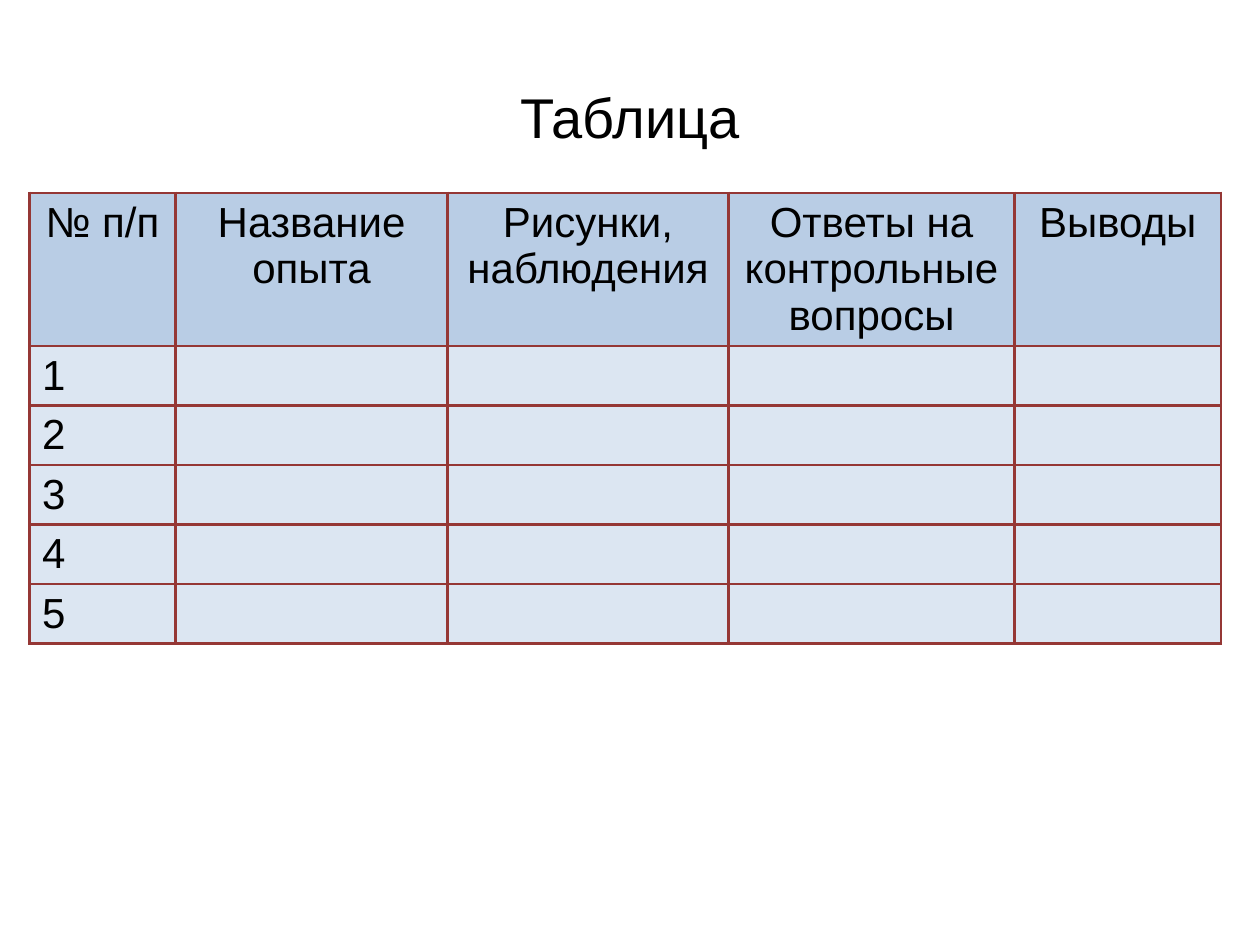
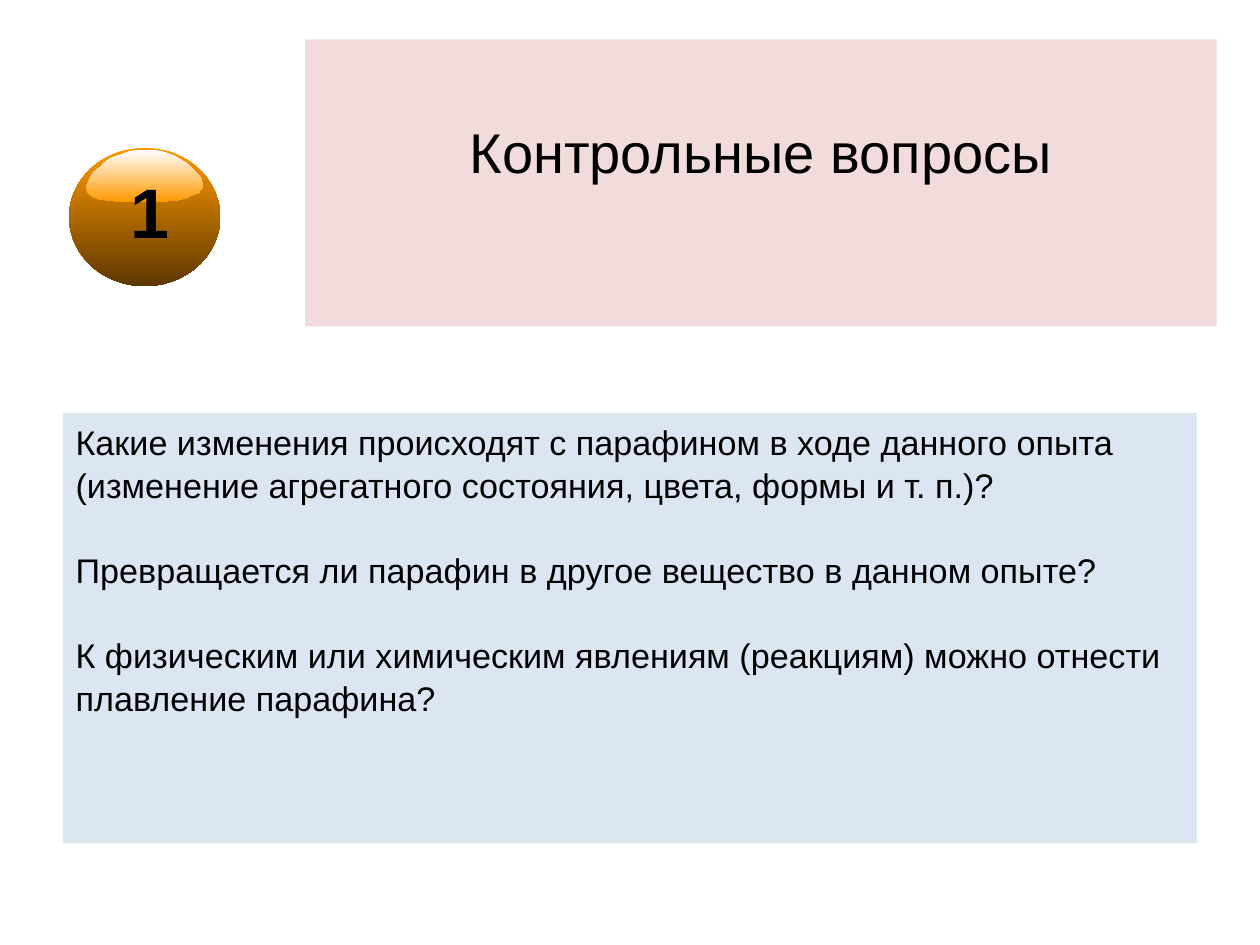
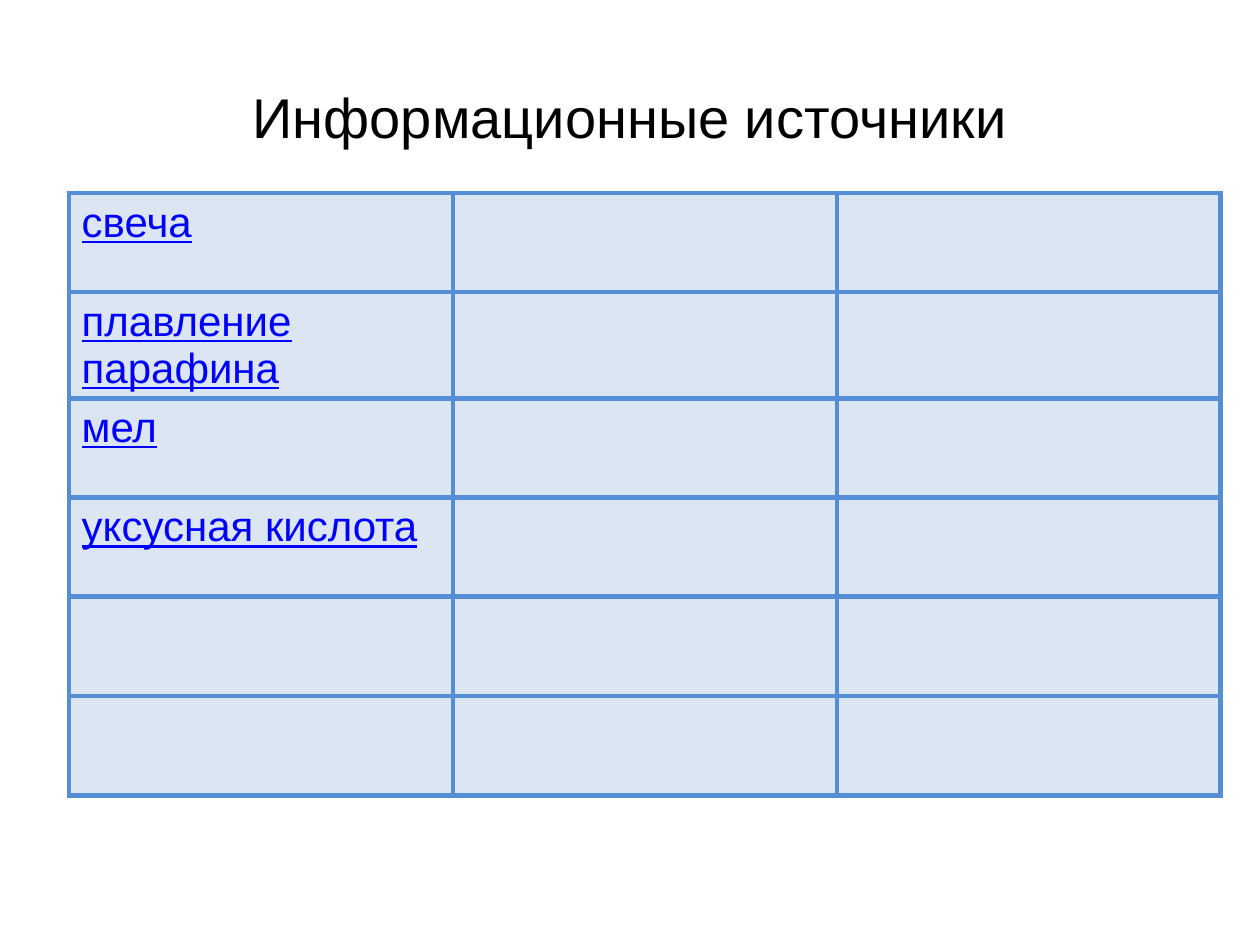
"""Builds three slides on chemistry experiments: a report table, control questions and sources."""
import pptx
import pptx.dml.color
import pptx.enum.shapes
import pptx.enum.text
import pptx.oxml
import pptx.oxml.ns
import pptx.util

Pt = pptx.util.Pt
ALIGN = pptx.enum.text.PP_ALIGN
AUTO_SIZE = pptx.enum.text.MSO_AUTO_SIZE

FONT = "Arial"
COLOURS = {
    "text": "000000",
    "link": "0000FF",
    "header": "B9CDE5",
    "panel": "DCE6F2",
    "title_panel": "F2DCDB",
    "report_border": "953735",
    "source_border": "558ED5",
    "orange": "FF9900",
    "brown": "5E3800",
    "shine": "FFFFFF",
}

REPORT_TITLE = "Таблица"
REPORT_HEADINGS = ["№ п/п", "Название опыта", "Рисунки, наблюдения",
                   "Ответы на контрольные вопросы", "Выводы"]
REPORT_WIDTHS = [83.5, 155.5, 160.5, 163.5, 118]
EXPERIMENT_COUNT = 5

QUESTIONS_TITLE = "Контрольные вопросы"
QUESTIONS = [
    "Какие изменения происходят с парафином в ходе данного опыта "
    "(изменение агрегатного состояния, цвета, формы и т. п.)?",
    "Превращается ли парафин в другое вещество в данном опыте?",
    "К физическим или химическим явлениям (реакциям) можно отнести плавление парафина?",
]
EXPERIMENT_NUMBER = "1"

SOURCES_TITLE = "Информационные источники"
SOURCES = ["свеча", "плавление парафина", "мел", "уксусная кислота", "", ""]
SOURCE_COLUMNS = 3

TITLE_BOX = (36, 21.6, 648, 90)
QUESTIONS_TITLE_BOX = (174.3, 22.5, 521, 164)
QUESTIONS_BOX = (36, 236, 648, 246)
BALL_BOX = (39.5, 84.5, 86.4, 79)
NUMBER_BOX = (67.7, 93, 36.7, 55.4)
TABLE_TOP = 110.2
TITLE_LINE = 36.8

SHINE_OUTLINE = [
    (160, 142), (161, 145), (161, 149), (159, 151), (158, 153), (155, 154), (152, 155),
    (149, 157), (145, 158), (141, 159), (136, 159), (131, 160), (97, 160), (93, 160),
    (89, 159), (85, 159), (81, 158), (78, 158), (76, 157), (73, 156), (71, 154), (70, 153),
    (69, 151), (68, 149), (69, 147), (70, 145), (72, 140), (75, 136), (79, 133), (83, 129),
    (87, 126), (92, 124), (98, 122), (103, 120), (109, 119), (115, 119), (122, 119),
    (128, 120), (134, 122), (139, 124), (144, 127), (149, 130), (153, 134), (157, 138),
]


def rgb(name):
    return pptx.dml.color.RGBColor.from_string(COLOURS[name])


def points(values):
    return [Pt(value) for value in values]


def style(paragraph, size, colour="text", bold=False, underline=False):
    font = paragraph.font
    font.name, font.size, font.bold = FONT, Pt(size), bold
    font.color.rgb = rgb(colour)
    if underline:
        font.underline = True


def paint(part, colour):
    part.fill.solid()
    part.fill.fore_color.rgb = rgb(colour)


def shade(shape, top, bottom):
    shape.shadow.inherit = False
    shape.line.fill.background()
    shape.fill.gradient()
    shape.fill.gradient_angle = 270
    for stop, colour in zip(shape.fill.gradient_stops, (top, bottom)):
        stop.color.rgb = rgb(colour)


def place(shape, box):
    shape.left, shape.top, shape.width, shape.height = points(box)


def add_slide(deck, layout, heading, box=TITLE_BOX):
    slide = deck.slides.add_slide(deck.slide_layouts[layout])
    title = slide.shapes.title
    place(title, box)
    title.text_frame.text = heading
    title.text_frame.auto_size = AUTO_SIZE.NONE
    title.text_frame.vertical_anchor = pptx.enum.text.MSO_ANCHOR.MIDDLE
    paragraph = title.text_frame.paragraphs[0]
    paragraph.alignment = ALIGN.CENTER
    style(paragraph, 32)
    return slide


def add_borders(cell, colour, width):
    properties = cell._tc.get_or_add_tcPr()
    for side in ("lnL", "lnR", "lnT", "lnB"):
        properties.append(pptx.oxml.parse_xml(
            f'<a:{side} {pptx.oxml.ns.nsdecls("a")} w="{Pt(width)}"><a:solidFill>'
            f'<a:srgbClr val="{COLOURS[colour]}"/></a:solidFill></a:{side}>'))


def add_grid(slide, rows, left, widths, row_height, border, border_width,
             has_header=False, text_colour="text", underline=False):
    frame = slide.shapes.add_table(
        len(rows), len(widths), *points((left, TABLE_TOP, sum(widths), row_height * len(rows))))
    grid = frame.table
    grid.first_row = grid.horz_banding = False
    for column, width in zip(grid.columns, widths):
        column.width = Pt(width)
    for row_index, row in enumerate(rows):
        heading = has_header and row_index == 0
        for column_index, entry in enumerate(row):
            cell = grid.cell(row_index, column_index)
            add_borders(cell, border, border_width)
            paint(cell, "header" if heading else "panel")
            if entry:
                cell.text = entry
                paragraph = cell.text_frame.paragraphs[0]
                if heading:
                    paragraph.alignment = ALIGN.CENTER
                style(paragraph, 24, text_colour, underline=underline)


def add_questions(body):
    place(body, QUESTIONS_BOX)
    paint(body, "panel")
    body.text_frame.text = "\n".join(QUESTIONS)
    body.text_frame.auto_size = AUTO_SIZE.NONE
    for index, paragraph in enumerate(body.text_frame.paragraphs):
        properties = paragraph._p.get_or_add_pPr()
        properties.set("marL", "0")
        properties.set("indent", "0")
        properties.append(pptx.oxml.parse_xml(f'<a:buNone {pptx.oxml.ns.nsdecls("a")}/>'))
        paragraph.space_before = Pt(24 if index else 0)
        paragraph.line_spacing = 1.05
        style(paragraph, 19.5)


def add_number_ball(slide):
    parts = slide.shapes.add_group_shape().shapes
    ball = parts.add_shape(pptx.enum.shapes.MSO_SHAPE.OVAL, *points(BALL_BOX))
    shade(ball, "orange", "brown")
    outline = parts.build_freeform(*SHINE_OUTLINE[0], scale=Pt(0.72))
    outline.add_line_segments(SHINE_OUTLINE[1:], close=True)
    shade(outline.convert_to_shape(), "shine", "orange")
    number = parts.add_textbox(*points(NUMBER_BOX)).text_frame
    number.word_wrap = False
    number.auto_size = AUTO_SIZE.SHAPE_TO_FIT_TEXT
    number.text = EXPERIMENT_NUMBER
    style(number.paragraphs[0], 40, bold=True)


def main():
    deck = pptx.Presentation()
    deck.slide_width, deck.slide_height = points((720, 540))

    report = add_slide(deck, 5, REPORT_TITLE)
    blanks = [""] * (len(REPORT_HEADINGS) - 1)
    experiments = [[str(number), *blanks] for number in range(1, EXPERIMENT_COUNT + 1)]
    add_grid(report, [REPORT_HEADINGS, *experiments], 16.8, REPORT_WIDTHS, 29.5,
             "report_border", 1.5, has_header=True)

    questions = add_slide(deck, 1, QUESTIONS_TITLE, QUESTIONS_TITLE_BOX)
    title = questions.shapes.title
    paint(title, "title_panel")
    title.text_frame.margin_bottom = Pt(3.6 + TITLE_LINE)
    add_questions(questions.placeholders[1])
    add_number_ball(questions)

    sources = add_slide(deck, 5, SOURCES_TITLE)
    rows = [[source] + [""] * (SOURCE_COLUMNS - 1) for source in SOURCES]
    add_grid(sources, rows, 39.5, [219.4] * SOURCE_COLUMNS, 56.7,
             "source_border", 3, text_colour="link", underline=True)

    deck.save("out.pptx")


if __name__ == "__main__":
    main()
